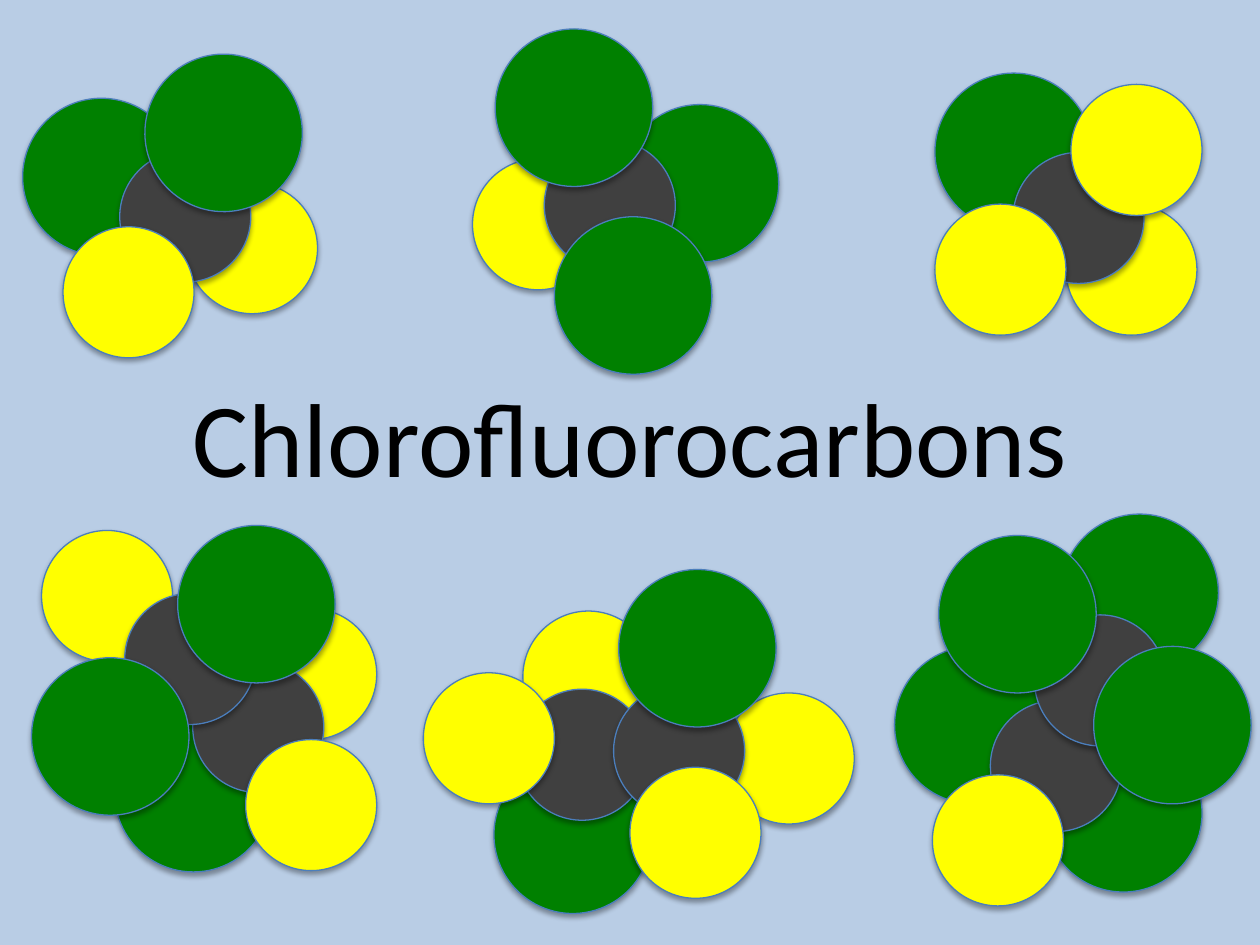
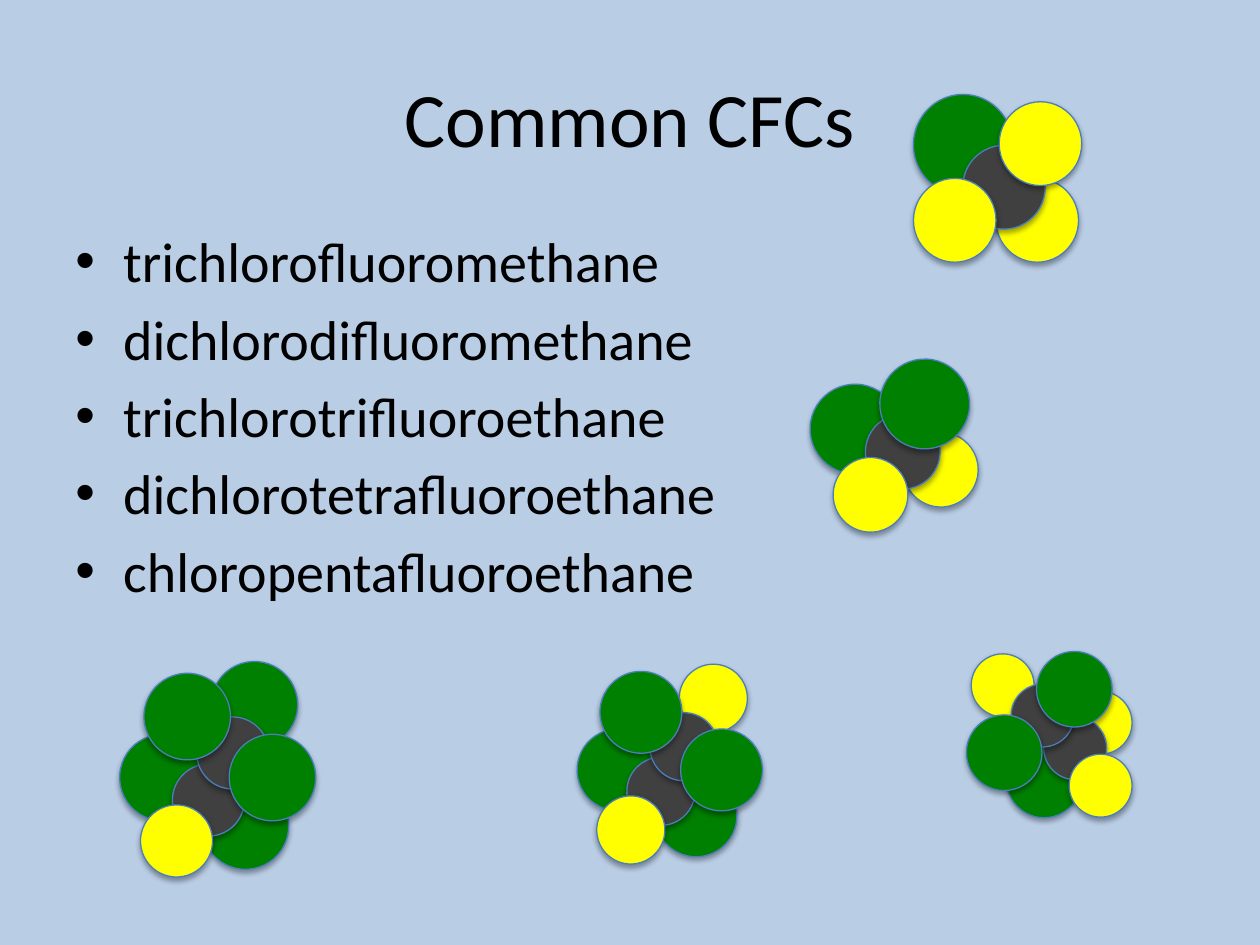
import lxml.etree
import pptx
import pptx.dml.color
import pptx.enum.shapes
import pptx.enum.text
import pptx.oxml
import pptx.oxml.ns
import pptx.util

Inches = pptx.util.Inches
Pt = pptx.util.Pt

SKY, INK, RIM = "B9CDE5", "000000", "4B7EBC"
FONT = "Calibri"

# Atom kind: diameter in inches at full scale, fill
KINDS = {
    "C": (1.04, "404040"),
    "Cl": (1.25, "008000"),
    "F": (1.04, "FFFF00"),
}

# Atoms from back to front: kind, left and top within the molecule
DUO = [("F", 1.3, 1.02), ("Cl", 0, 0.35), ("C", 0.77, 0.77),
       ("Cl", 0.97, 0), ("F", 0.32, 1.37)]
TRIO = [("F", 1.04, 1.04), ("Cl", 0, 0), ("C", 0.62, 0.63),
        ("F", 0, 1.04), ("F", 1.08, 0.09)]
RICH = [("F", 0, 1.03), ("Cl", 1.18, 0.6), ("C", 0.57, 0.88),
        ("Cl", 0.65, 1.49), ("Cl", 0.18, 0)]
EVEN = [("F", 1.7, 0.66), ("Cl", 0.66, 1.5), ("C", 1.28, 1.08),
        ("F", 1.7, 1.7), ("F", 0.08, 0.04), ("C", 0.74, 0.54),
        ("Cl", 1.16, 0), ("Cl", 0, 1.05)]
WIDE = [("F", 0.79, 0.33), ("Cl", 0.56, 1.48), ("C", 0.74, 0.95),
        ("F", 0, 0.82), ("F", 2.38, 0.98), ("C", 1.51, 0.92),
        ("Cl", 1.55, 0), ("F", 1.64, 1.57)]
FULL = [("Cl", 1.32, 0), ("Cl", 1.19, 1.75), ("Cl", 0, 1.05),
        ("C", 0.76, 1.48), ("F", 0.3, 2.07), ("C", 1.11, 0.8),
        ("Cl", 1.58, 1.05), ("Cl", 0.35, 0.17)]
# One outer chlorine of FULL gives way to a fluorine
SWAP = FULL[1:5] + [("F", 1.56, 0.06)] + FULL[5:]

# Molecules: atoms, left, top, scale across, scale down, turn
SLIDES = [
    {
        "title": ("Chlorofluorocarbons", 2.83, 60),
        "items": [],
        "cells": [
            (DUO, 0.18, 0.43, 1, 1, 339.9),
            (TRIO, 7.42, 0.58, 1, 1, 0),
            (RICH, 3.75, 0.23, 1, 1, 120.8),
            (EVEN, 0.25, 4.17, 1, 1, 270),
            (FULL, 7.1, 4.08, 1, 1, 341.6),
            (WIDE, 3.36, 4.52, 1, 1, 43.2),
        ],
    },
    {
        "title": ("Common CFCs", 0.3, 44),
        "items": [
            "trichlorofluoromethane",
            "dichlorodifluoromethane",
            "trichlorotrifluoroethane",
            "dichlorotetrafluoroethane",
            "chloropentafluoroethane",
        ],
        "cells": [
            (TRIO, 7.25, 0.75, 0.63, 0.64, 0),
            (DUO, 6.43, 2.85, 0.57, 0.57, 339.9),
            (EVEN, 7.67, 5.17, 0.48, 0.48, 270),
            (SWAP, 4.58, 5.24, 0.52, 0.52, 341.6),
            (FULL, 0.95, 5.25, 0.55, 0.55, 341.6),
        ],
    },
]


def tint(code):
    return pptx.dml.color.RGBColor.from_string(code)


def paint(fill, code):
    fill.solid()
    fill.fore_color.rgb = tint(code)


def apply(target, form):
    for name, value in form.items():
        setattr(target, name, value)


def shade(shape):
    """Give the shape a soft shadow straight below it."""
    shape.shadow.inherit = False
    glow = shape._element.spPr.find(pptx.oxml.ns.qn("a:effectLst"))
    glow.append(pptx.oxml.parse_xml(
        f'<a:outerShdw {pptx.oxml.ns.nsdecls("a")} blurRad="{Pt(3.1)}" '
        f'dist="{Pt(1.8)}" dir="5400000" rotWithShape="0">'
        '<a:srgbClr val="000000"><a:alpha val="35000"/></a:srgbClr>'
        '</a:outerShdw>'))


def build(slide, atoms, left, top, wide, high, turn):
    """Draw one molecule as a group of circles."""
    group = slide.shapes.add_group_shape()
    for kind, x, y in atoms:
        size, code = KINDS[kind]
        ball = group.shapes.add_shape(
            pptx.enum.shapes.MSO_SHAPE.OVAL,
            Inches(left + x * wide), Inches(top + y * high),
            Inches(size * wide), Inches(size * high))
        ball.rotation = turn
        paint(ball.fill, code)
        paint(ball.line.fill, RIM)
        ball.line.width = Pt(0.75)
        shade(ball)


def write(slide, top, high, lines, size, frame, para):
    """Add a text box across the slide, one paragraph a line."""
    box = slide.shapes.add_textbox(
        Inches(0.5), Inches(top), Inches(9), Inches(high)).text_frame
    apply(box, {"word_wrap": True, **frame})
    for i, line in enumerate(lines):
        part = box.add_paragraph() if i else box.paragraphs[0]
        apply(part, para)
        run = part.add_run()
        run.text = line
        apply(run.font, {"name": FONT, "size": Pt(size)})
        run.font.color.rgb = tint(INK)
    return box


def dot(part):
    """Put a bullet with a hanging indent before the paragraph."""
    props = part._p.get_or_add_pPr()
    props.set("marL", str(Inches(0.38)))
    props.set("indent", str(-Inches(0.38)))
    for tag, key, value in (("buFont", "typeface", "Arial"),
                            ("buChar", "char", "•")):
        mark = lxml.etree.SubElement(props, pptx.oxml.ns.qn(f"a:{tag}"))
        mark.set(key, value)


def main():
    deck = pptx.Presentation()
    apply(deck, {"slide_width": Inches(10), "slide_height": Inches(7.5)})
    text = pptx.enum.text
    for page in SLIDES:
        slide = deck.slides.add_slide(deck.slide_layouts[6])
        paint(slide.background.fill, SKY)
        title, top, size = page["title"]
        write(slide, top, 1.25, [title], size,
              {"vertical_anchor": text.MSO_ANCHOR.MIDDLE},
              {"alignment": text.PP_ALIGN.CENTER})
        if page["items"]:
            box = write(slide, 1.75, 4.95, page["items"], 32, {},
                        {"space_before": Pt(5.8)})
            for part in box.paragraphs:
                dot(part)
        for cell in page["cells"]:
            build(slide, *cell)
    deck.save("out.pptx")


if __name__ == "__main__":
    main()
